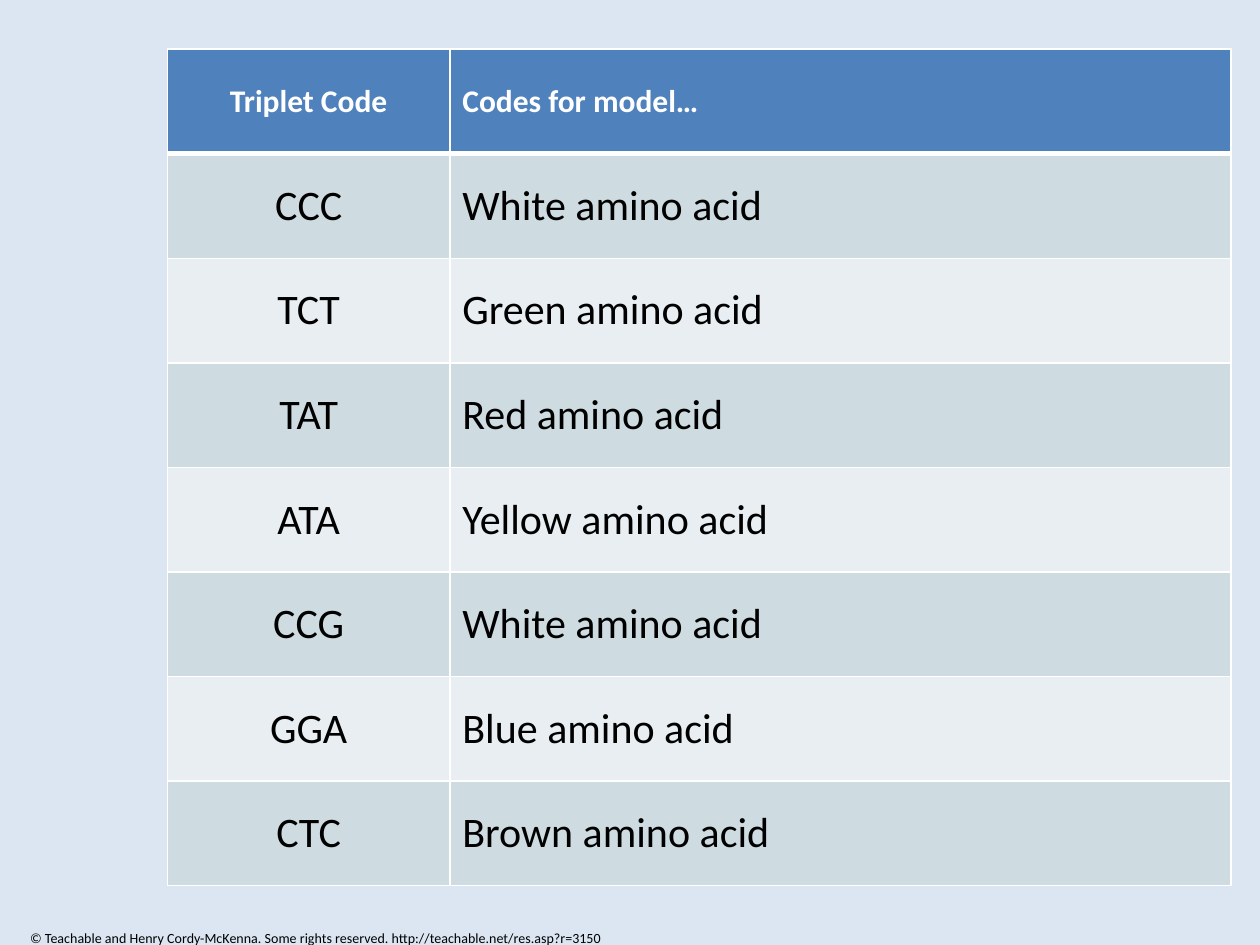
from lxml.etree import SubElement as Sub
from pptx import Presentation
from pptx.dml.color import RGBColor
from pptx.enum.text import MSO_ANCHOR as Anchor, PP_ALIGN as Align
from pptx.oxml.ns import qn
from pptx.util import Inches, Pt

HEAD = ("Triplet Code", "Codes for model…")
CODES = (("CCC", "White"), ("TCT", "Green"), ("TAT", "Red"), ("ATA", "Yellow"),
         ("CCG", "White"), ("GGA", "Blue"), ("CTC", "Brown"))
BANDS = ("CEDCE1", "E8EEF1")
CREDIT = ("© Teachable and Henry Cordy-McKenna. Some rights reserved. "
          "http://teachable.net/res.asp?r=3150")


def paint(fill, tone):
    """Give a fill one solid colour."""
    fill.solid()
    fill.fore_color.rgb = RGBColor.from_string(tone)


def write(frame, text, size=24, tone="000000", bold=False, align=Align.LEFT):
    """Put formatted text in a frame."""
    para = frame.paragraphs[0]
    para.alignment = align
    run = para.add_run()
    run.text = text
    run.font.name = "Calibri"
    run.font.size = Pt(size)
    run.font.bold = bold
    paint(run.font.fill, tone)


def edge(cell, top=1, base=1):
    """Draw the white borders of a cell."""
    props = cell._tc.get_or_add_tcPr()
    for side, width in zip("LRTB", (1, 1, top, base)):
        line = Sub(props, qn("a:ln" + side), w=str(Pt(width)))
        Sub(Sub(line, qn("a:solidFill")), qn("a:srgbClr"), val="FFFFFF")


def grid(slide):
    """Add the table of triplet codes."""
    rows = [HEAD] + [(code, f"{hue} amino acid") for code, hue in CODES]
    table = slide.shapes.add_table(len(rows), 2, Inches(1.33), Inches(0.39),
                                   Inches(8.44), Inches(6.64)).table
    for col, width in zip(table.columns, (2.24, 6.2)):
        col.width = Inches(width)
    for r, row in enumerate(rows):
        look = {"size": 18, "tone": "FFFFFF", "bold": True} if r == 0 else {}
        for c, text in enumerate(row):
            cell = table.cell(r, c)
            cell.vertical_anchor = Anchor.MIDDLE
            edge(cell, top=3 if r == 1 else 1, base=3 if r == 0 else 1)
            paint(cell.fill, BANDS[(r - 1) % 2] if r else "4F81BD")
            write(cell.text_frame, text,
                  align=Align.LEFT if c else Align.CENTER, **look)


def credit(slide):
    """Add the rights line at the foot."""
    box = slide.shapes.add_textbox(Inches(0.14), Inches(7.33),
                                   Inches(9.72), Inches(0.24))
    box.text_frame.word_wrap = True
    write(box.text_frame, CREDIT, size=8)


def main():
    """Build and save the slide."""
    deck = Presentation()
    deck.slide_width, deck.slide_height = Inches(10), Inches(7.5)
    slide = deck.slides.add_slide(deck.slide_layouts[6])
    paint(slide.background.fill, "DCE6F2")
    grid(slide)
    credit(slide)
    deck.save("out.pptx")


if __name__ == "__main__":
    main()
